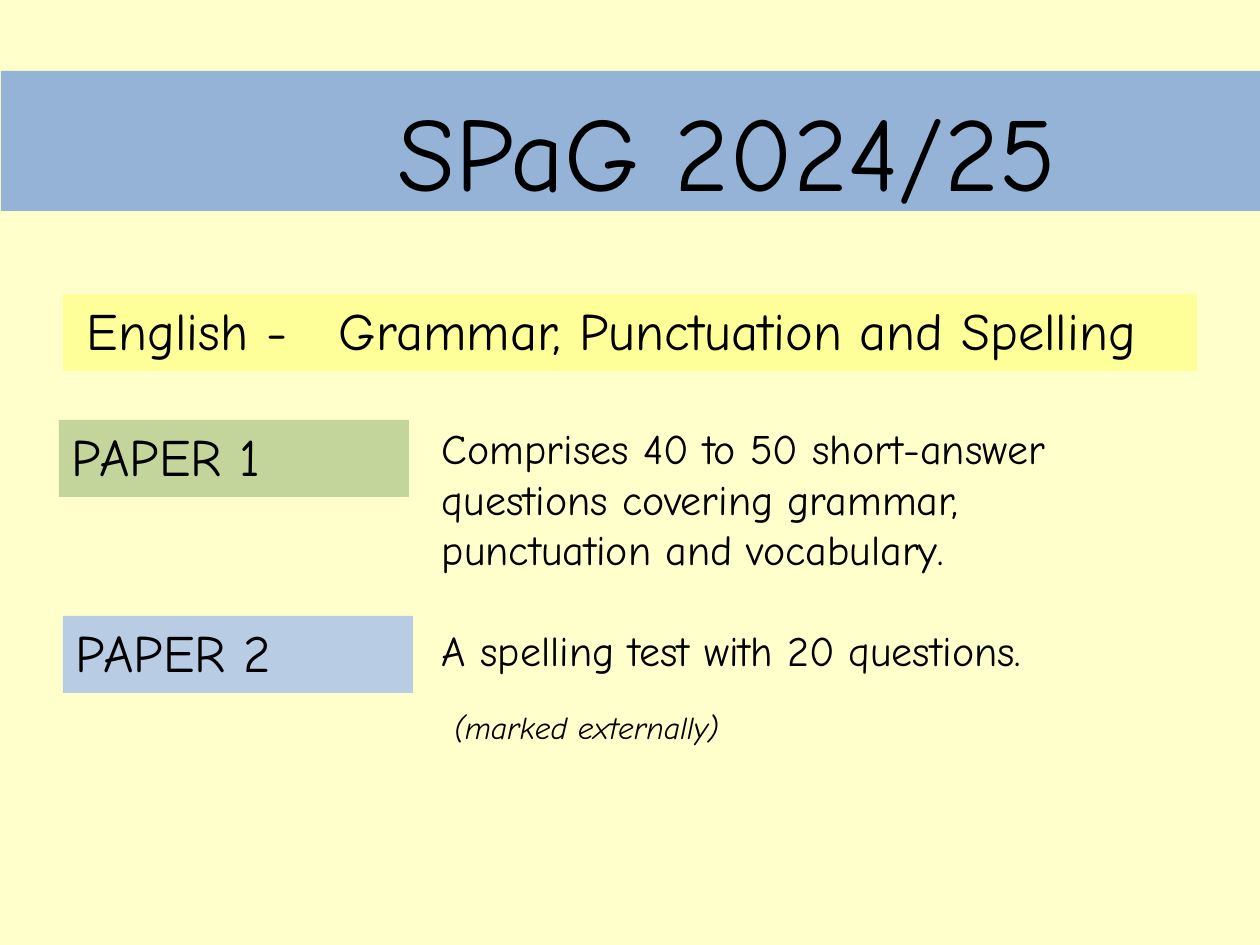
from dataclasses import dataclass
from pptx import Presentation
from pptx.dml.color import RGBColor
from pptx.enum.shapes import MSO_SHAPE
from pptx.enum.text import MSO_ANCHOR, MSO_AUTO_SIZE, PP_ALIGN
from pptx.oxml.ns import qn
from pptx.util import Emu, Pt
from lxml import etree

RECT = MSO_SHAPE.RECTANGLE
TOP = MSO_ANCHOR.TOP
GROW = MSO_AUTO_SIZE.SHAPE_TO_FIT_TEXT
LEFT = PP_ALIGN.LEFT
SCALE = 914400 / 126


def px(num):
    return Emu(round(num * SCALE))


@dataclass(frozen=True)
class Theme:
    font: str = "Comic Neue"
    ink: str = "000000"
    page: str = "FFFFCC"
    band: str = "94B3D6"
    topic: str = "FFFF99"
    green: str = "C3D59B"
    blue: str = "B8CDE4"
    title: int = 60
    head: int = 30
    body: int = 24
    note: int = 18


class Deck:
    def __init__(self, theme):
        self.theme = theme
        self.deck = Presentation()
        self.deck.slide_width, self.deck.slide_height = px(1260), px(945)
        self.slide = self.deck.slides.add_slide(self.deck.slide_layouts[6])
        self.paint(self.slide.background.fill, theme.page)

    def paint(self, fill, color):
        fill.solid()
        fill.fore_color.rgb = RGBColor.from_string(color)

    def box(self, area, color):
        shape = self.slide.shapes.add_shape(RECT, *map(px, area))
        shape.shadow.inherit = False
        self.paint(shape.fill, color)
        shape.line.fill.background()
        return shape

    def text(self, area):
        return self.slide.shapes.add_textbox(*map(px, area))

    def label(self, shape, inset, *paras):
        frame = shape.text_frame
        form = {"word_wrap": True, "auto_size": GROW, "vertical_anchor": TOP,
                "margin_left": 0, "margin_top": px(inset),
                "margin_right": 0, "margin_bottom": 0}
        for name, value in form.items():
            setattr(frame, name, value)
        for num, para in enumerate(paras):
            line = frame.add_paragraph() if num else frame.paragraphs[0]
            self.para(line, **para)

    def para(self, line, words, size, indent, before, tab=None, italic=False):
        line.alignment, line.space_before = LEFT, Pt(before)
        props = line._p.get_or_add_pPr()
        props.set("marL", str(px(indent)))
        props.set("indent", "0")
        if tab:
            tabs = etree.SubElement(props, qn("a:tabLst"))
            etree.SubElement(tabs, qn("a:tab"), pos=str(px(tab)), algn="l")
        run = line.add_run()
        run.text = words
        form = {"name": self.theme.font, "size": Pt(size), "italic": italic}
        for name, value in form.items():
            setattr(run.font, name, value)
        run.font.color.rgb = RGBColor.from_string(self.theme.ink)


def main():
    theme = Theme()
    deck = Deck(theme)

    # Title band
    deck.box((1, 71, 1259, 140), theme.band)
    deck.label(deck.text((116, 43, 1051, 171)), 43,
               dict(words="SPaG 2024/25", size=theme.title,
                    indent=282, before=1))

    # Topic bar
    deck.label(deck.box((63, 294, 1134, 77), theme.topic), 4,
               dict(words="English -\tGrammar, Punctuation and Spelling",
                    size=theme.head, indent=24, before=2, tab=267))

    # Paper labels
    papers = (("PAPER 1", 59, 420, theme.green),
              ("PAPER 2", 63, 616, theme.blue))
    for words, left, top, color in papers:
        deck.label(deck.box((left, top, 350, 77), color), 4,
                   dict(words=words, size=theme.head, indent=13, before=2.1))

    # Paper details
    deck.label(deck.text((441, 422, 655, 326)), 1,
               dict(words="Comprises 40 to 50 short-answer questions covering "
                    "grammar, punctuation and vocabulary.",
                    size=theme.body, indent=1, before=1),
               dict(words="A spelling test with 20 questions.",
                    size=theme.body, indent=1, before=28.8),
               dict(words="(marked externally)", size=theme.note,
                    indent=13, before=19.1, italic=True))

    deck.deck.save("out.pptx")


if __name__ == "__main__":
    main()
